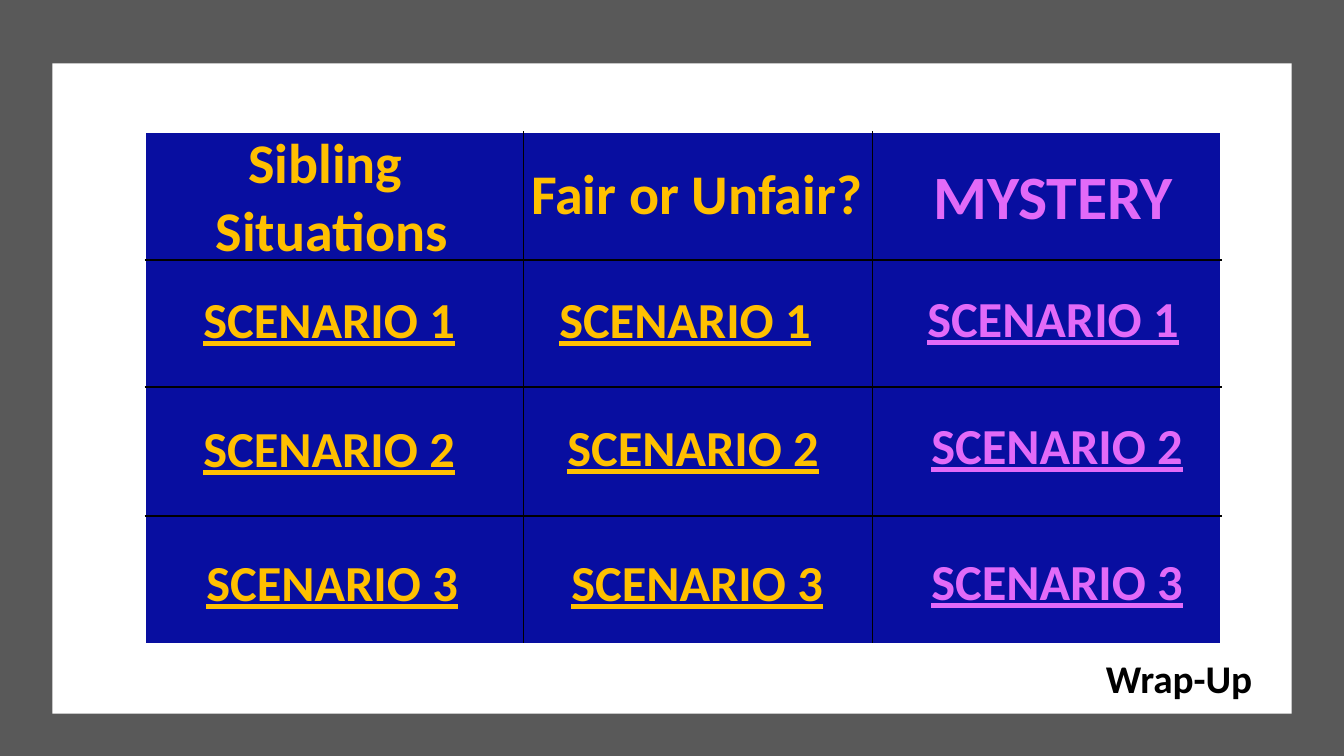
from pptx import Presentation
from pptx.dml.color import RGBColor as RGB
from pptx.enum.shapes import MSO_SHAPE as Shape
from pptx.enum.text import MSO_AUTO_SIZE as Fit, PP_ALIGN as Align
from pptx.oxml import parse_xml
from pptx.oxml.ns import nsdecls
from pptx.util import Inches, Pt

GREY = RGB(0x59, 0x59, 0x59)
WHITE = RGB(0xFF, 0xFF, 0xFF)
BLACK = RGB(0, 0, 0)
BLUE = RGB(0x08, 0x0E, 0xA0)
GOLD = RGB(0xFF, 0xC0, 0x00)
PINK = RGB(0xE2, 0x6A, 0xF8)


class Board:
    """Draws the elements of a game board on one slide."""

    def __init__(self, slide, font):
        self.slide = slide
        self.font = font

    def panel(self, box, color):
        rect = self.slide.shapes.add_shape(Shape.RECTANGLE, *map(Inches, box))
        rect.shadow.inherit = False
        rect.fill.solid()
        rect.fill.fore_color.rgb = color
        rect.line.fill.background()

    def edge(self, cell, side, color):
        cell._tc.get_or_add_tcPr().append(parse_xml(
            f'<a:ln{side} {nsdecls("a")} w="12700"><a:solidFill>'
            f'<a:srgbClr val="{color}"/></a:solidFill></a:ln{side}>'))

    def grid(self, left, top, cols, rows):
        box = map(Inches, (left, top, sum(cols), sum(rows)))
        table = self.slide.shapes.add_table(len(rows), len(cols), *box).table
        for col, width in zip(table.columns, cols):
            col.width = Inches(width)
        for row, height in zip(table.rows, rows):
            row.height = Inches(height)
        for r in range(len(rows)):
            for c in range(len(cols)):
                cell = table.cell(r, c)
                outer = {"L": c == 0, "R": c == len(cols) - 1,
                         "T": r == 0, "B": r == len(rows) - 1}
                for side, rim in outer.items():
                    self.edge(cell, side, WHITE if rim else BLACK)
                cell.fill.solid()
                cell.fill.fore_color.rgb = BLUE

    def label(self, text, box, size, color, line=False, align=Align.CENTER, pad=0.05):
        frame = self.slide.shapes.add_textbox(*map(Inches, box)).text_frame
        frame.word_wrap = True
        frame.auto_size = Fit.SHAPE_TO_FIT_TEXT
        frame.margin_top = frame.margin_bottom = Inches(pad)
        frame.text = text
        for para in frame.paragraphs:
            para.alignment = align
            font = para.font
            font.name, font.size, font.bold = self.font, Pt(size), True
            font.color.rgb = color
            if line:
                font.underline = True


def main():
    deck = Presentation()
    deck.slide_width, deck.slide_height = Inches(13.33), Inches(7.5)
    board = Board(deck.slides.add_slide(deck.slide_layouts[6]), "Calibri")

    board.panel((0, 0, 13.33, 7.5), GREY)
    board.panel((0.52, 0.63, 12.29, 6.45), WHITE)
    board.grid(1.44, 1.31, (3.75, 3.46, 3.46), (1.27, 1.26, 1.28, 1.27))

    board.label("Sibling \nSituations", (1.99, 1.22, 2.6, 1.45), 40, GOLD)
    board.label("Fair or Unfair?", (4.93, 1.52, 3.96, 0.84), 40, GOLD)
    board.label("MYSTERY", (9.12, 1.52, 2.65, 0.84), 44, PINK)

    links = (
        (GOLD, ((0.92, 2.81), (0.92, 4.09), (0.95, 5.42))),
        (GOLD, ((4.45, 2.81), (4.53, 4.08), (4.57, 5.42))),
        (PINK, ((8.1, 2.8), (8.14, 4.06), (8.14, 5.41))),
    )
    for color, spots in links:
        for num, (left, top) in enumerate(spots, 1):
            board.label(f"SCENARIO {num}", (left, top, 4.69, 0.71), 36, color, line=True)

    board.label("Wrap-Up", (10.87, 6.39, 2.63, 0.67), 28, BLACK, align=Align.LEFT, pad=0.1)
    deck.save("out.pptx")


if __name__ == "__main__":
    main()
